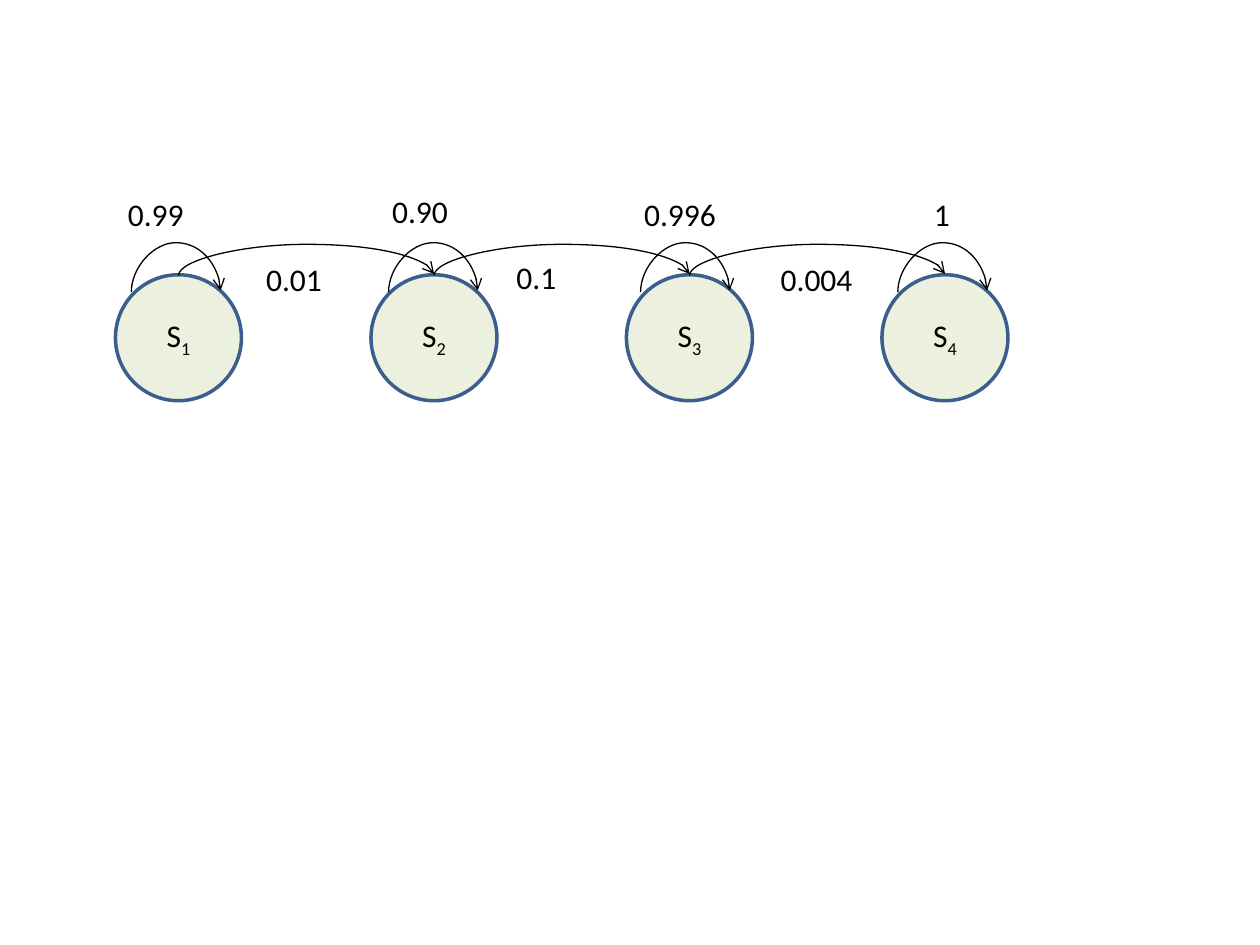
from lxml import etree
from pptx import Presentation
from pptx.dml.color import RGBColor
from pptx.enum.shapes import MSO_CONNECTOR, MSO_SHAPE
from pptx.enum.text import MSO_ANCHOR, MSO_AUTO_SIZE, PP_ALIGN
from pptx.oxml.ns import qn
from pptx.util import Pt

OVAL = MSO_SHAPE.OVAL
CURVE = MSO_CONNECTOR.CURVE
MIDDLE = MSO_ANCHOR.MIDDLE
CENTER = PP_ALIGN.CENTER
FIT_SHAPE = MSO_AUTO_SIZE.SHAPE_TO_FIT_TEXT

COLORS = {"state": "EBF1DE", "outline": "3A5F8C", "ink": "000000"}
FONT = "Calibri"

STATE_COUNT = 4
STATE_LEFT, STATE_TOP, STATE_SIZE, STATE_STEP = 66, 157, 72, 146
LOOP_LEFTS = [75, 222, 366, 513]
LOOP_START, LOOP_SPAN, LOOP_RISE = 167, 51, 28.54
STEP_START, STEP_RISE = 157.5, 18

LABELS = [
    ("0.99", 66, 108, 47),
    ("0.90", 217, 106, 47),
    ("0.996", 361, 108, 56),
    ("1", 526.5, 108, 24),
    ("0.01", 145, 145, 47),
    ("0.1", 288, 144, 37.5),
    ("0.004", 439, 145, 56),
]


def color(name):
    return RGBColor.from_string(COLORS[name])


def format_run(run):
    run.font.name = FONT
    run.font.size = Pt(18)
    run.font.color.rgb = color("ink")


def add_state(slide, index):
    left = STATE_LEFT + index * STATE_STEP
    shape = slide.shapes.add_shape(
        OVAL, Pt(left), Pt(STATE_TOP), Pt(STATE_SIZE), Pt(STATE_SIZE))
    shape.shadow.inherit = False
    shape.fill.solid()
    shape.fill.fore_color.rgb = color("state")
    shape.line.color.rgb = color("outline")
    shape.line.width = Pt(2)
    shape.text_frame.vertical_anchor = MIDDLE
    paragraph = shape.text_frame.paragraphs[0]
    paragraph.alignment = CENTER
    for text in ("S", str(index + 1)):
        run = paragraph.add_run()
        run.text = text
        format_run(run)
    run.font._element.set("baseline", "-25000")


def add_arc(slide, left, start_y, span, rise):
    drop = 1
    center_x, center_y = left + span / 2, start_y - drop / 2
    connector = slide.shapes.add_connector(
        CURVE,
        Pt(center_x + drop / 2), Pt(center_y + span / 2),
        Pt(center_x - drop / 2), Pt(center_y - span / 2))
    connector.line.color.rgb = color("ink")
    connector.line.width = Pt(0.75)
    properties = connector._element.spPr
    properties.find(qn("a:xfrm")).set("rot", "5400000")
    adjustments = properties.find(qn("a:prstGeom")).find(qn("a:avLst"))
    etree.SubElement(adjustments, qn("a:gd"), name="adj1",
                     fmla=f"val {round(rise / drop * 100000)}")
    etree.SubElement(properties.find(qn("a:ln")), qn("a:tailEnd"), type="arrow")
    etree.SubElement(properties, qn("a:effectLst"))


def add_label(slide, text, left, top, width):
    label = slide.shapes.add_textbox(Pt(left), Pt(top), Pt(width), Pt(29))
    frame = label.text_frame
    frame.text = text
    frame.word_wrap = False
    frame.auto_size = FIT_SHAPE
    format_run(frame.paragraphs[0].runs[0])


def main():
    presentation = Presentation()
    presentation.slide_width = Pt(720)
    presentation.slide_height = Pt(540)
    slide = presentation.slides.add_slide(presentation.slide_layouts[6])

    for index in range(STATE_COUNT):
        add_state(slide, index)
    for left in LOOP_LEFTS:
        add_arc(slide, left, LOOP_START, LOOP_SPAN, LOOP_RISE)
    for index in range(STATE_COUNT - 1):
        center = STATE_LEFT + STATE_SIZE / 2 + index * STATE_STEP
        add_arc(slide, center, STEP_START, STATE_STEP, STEP_RISE)
    for label in LABELS:
        add_label(slide, *label)

    presentation.save("out.pptx")


if __name__ == "__main__":
    main()
